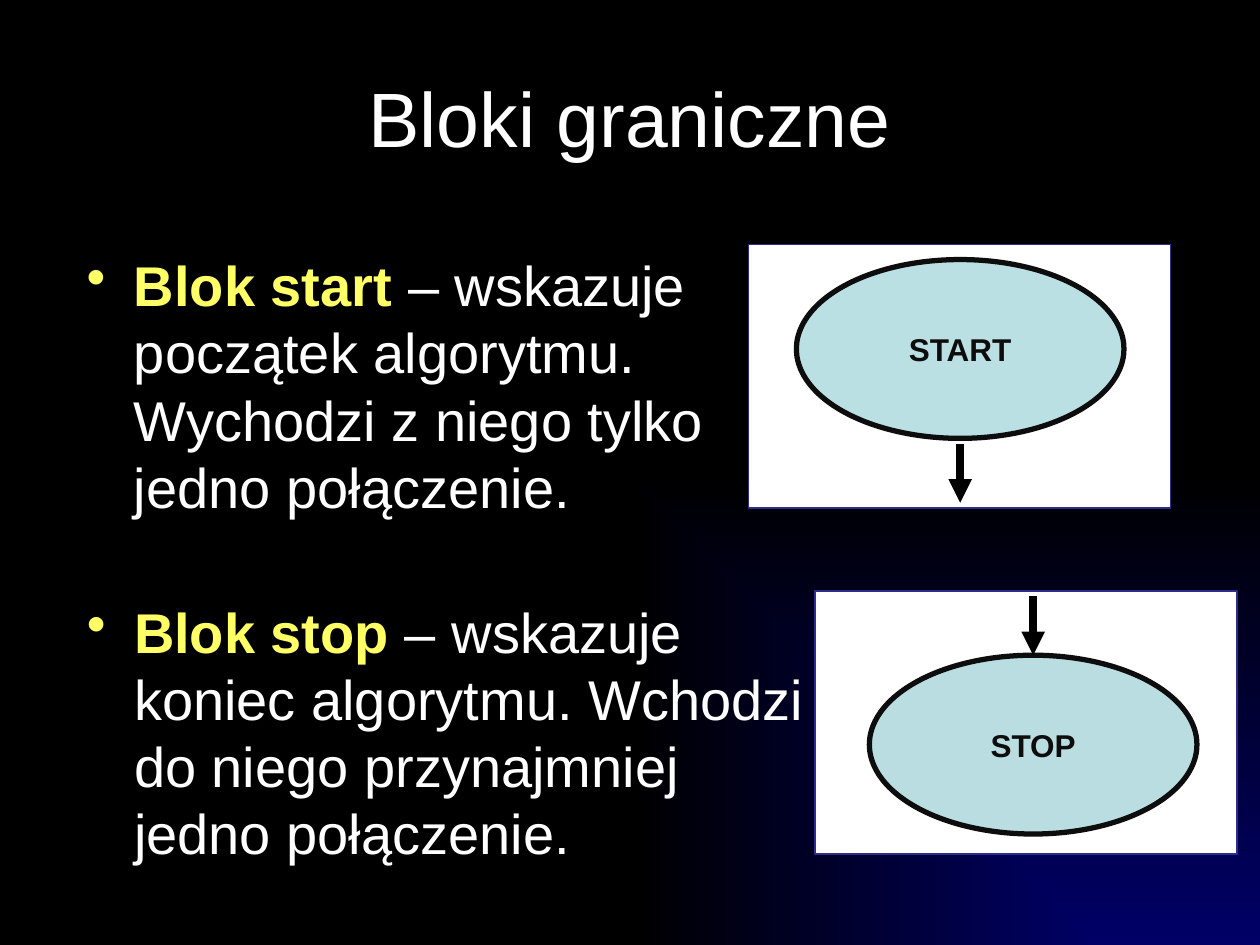
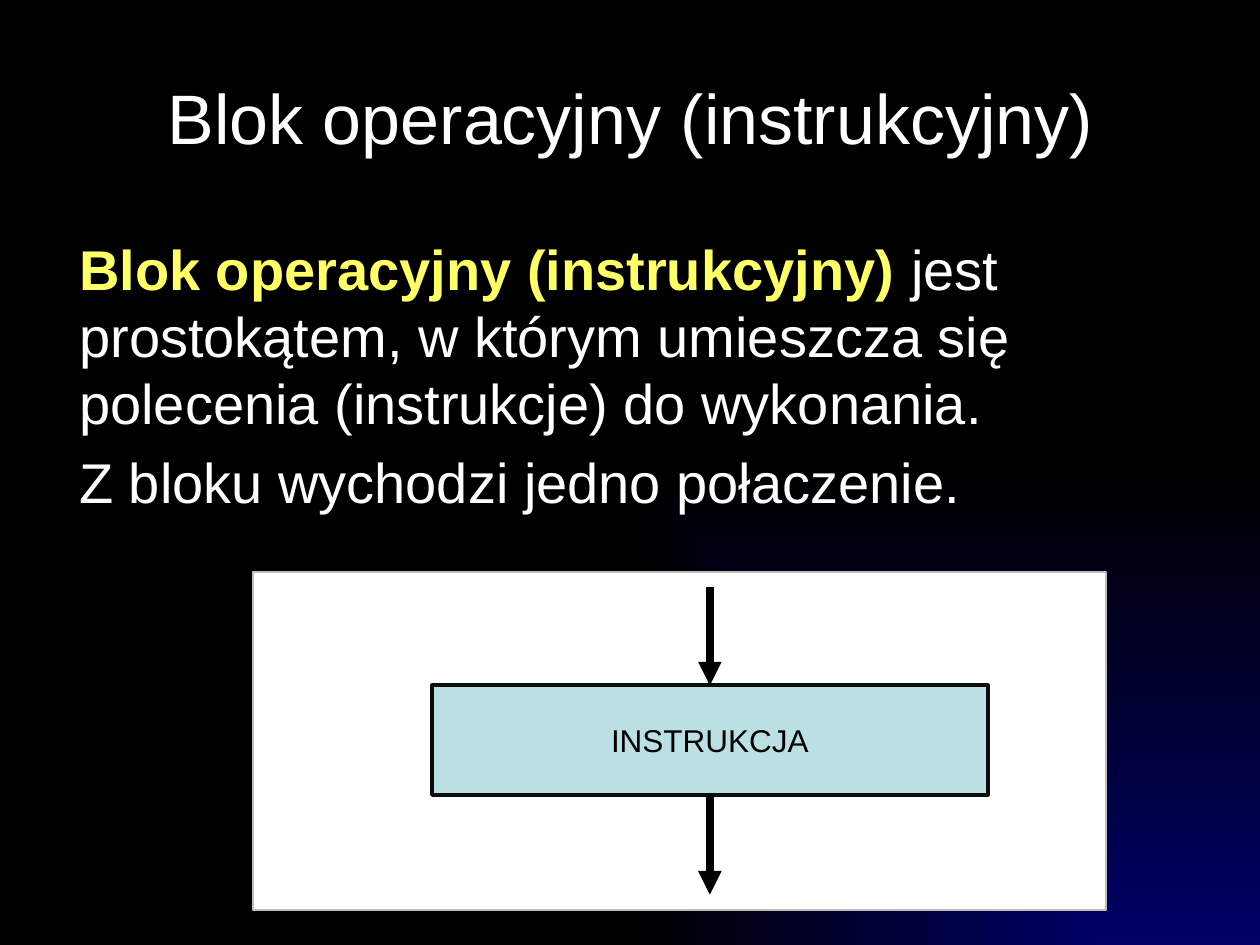
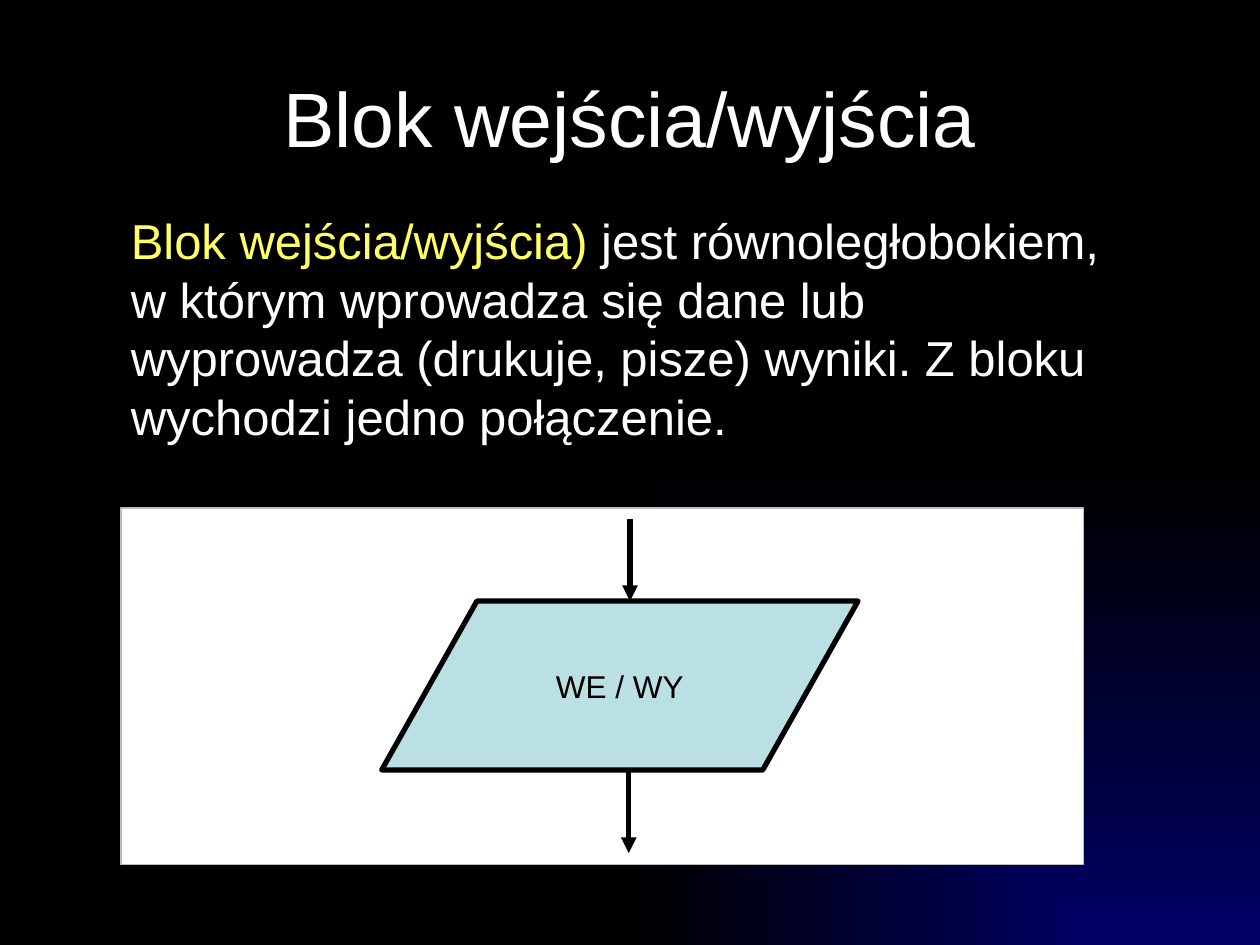
from dataclasses import dataclass

from lxml.etree import SubElement
from pptx import Presentation
from pptx.dml.color import RGBColor
from pptx.enum.shapes import MSO_CONNECTOR, MSO_SHAPE
from pptx.enum.text import MSO_ANCHOR, PP_ALIGN
from pptx.oxml import parse_xml
from pptx.oxml.ns import nsdecls, qn
from pptx.util import Pt


@dataclass(frozen=True)
class Theme:
    """Colours, font and type sizes of the deck."""
    font: str = "Arial"
    night: str = "000000"
    navy: str = "000066"
    white: str = "FFFFFF"
    yellow: str = "FFFF66"
    aqua: str = "BBE0E3"
    teal: str = "BADDE1"
    ink: str = "0D0D0D"
    indigo: str = "2D2D8A"
    silver: str = "BDBDBD"
    title: int = 44
    tight: int = 40
    body: int = 32
    small: int = 28
    label: int = 18


@dataclass(frozen=True)
class Node:
    """A flowchart block, placed relative to its panel."""
    kind: MSO_SHAPE
    box: tuple
    text: str
    fill: str
    line: str
    weight: float
    ink: str
    bold: bool = False


THEME = Theme()
WIDE, HIGH = 720, 540


def paint(run, size, color, bold=False):
    """Give a run its font, size, colour and weight."""
    font = run.font
    font.name, font.size, font.bold = THEME.font, Pt(size), bold
    font.color.rgb = RGBColor.from_string(color)


def shade(master):
    """Fill the master with a glow from the lower right corner."""
    master.background.fill.solid()
    plain = master.element.find(".//" + qn("a:solidFill"))
    glow = parse_xml(
        f'<a:gradFill {nsdecls("a")} rotWithShape="0"><a:gsLst>'
        f'<a:gs pos="0"><a:srgbClr val="{THEME.navy}"/></a:gs>'
        f'<a:gs pos="100000"><a:srgbClr val="{THEME.night}"/></a:gs></a:gsLst>'
        '<a:path path="rect"><a:fillToRect l="100000" t="100000"/></a:path>'
        '</a:gradFill>')
    plain.getparent().replace(plain, glow)


def frame(slide, box):
    """Add a wrapping text box and return its text frame."""
    area = slide.shapes.add_textbox(*map(Pt, box)).text_frame
    area.word_wrap = True
    return area


def head(slide, text, size=THEME.title):
    """Write the centred slide title."""
    area = frame(slide, (36, 21.6, 648, 90))
    area.vertical_anchor = MSO_ANCHOR.MIDDLE
    para = area.paragraphs[0]
    para.text, para.alignment = text, PP_ALIGN.CENTER
    paint(para.runs[0], size, THEME.white)


def prose(slide, box, paras, size=THEME.body, bold=True, bullet=False):
    """Write paragraphs, each a yellow term followed by white text."""
    area = frame(slide, box)
    for count, (term, rest) in enumerate(paras):
        para = area.add_paragraph() if count else area.paragraphs[0]
        for text, color, heavy in ((term, THEME.yellow, bold),
                                   (rest, THEME.white, False)):
            if text:
                run = para.add_run()
                run.text = text
                paint(run, size, color, heavy)
        props = para._p.get_or_add_pPr()
        space = SubElement(props, qn("a:spcBef"))
        SubElement(space, qn("a:spcPct")).set("val", "20000")
        if bullet:
            props.set("marL", str(Pt(27)))
            props.set("indent", str(Pt(-27)))
            SubElement(props, qn("a:buChar")).set("char", "•")


def block(slide, kind, box, fill, line, weight):
    """Draw a flat preset shape."""
    shape = slide.shapes.add_shape(kind, *map(Pt, box))
    shape.shadow.inherit = False
    shape.fill.solid()
    shape.fill.fore_color.rgb = RGBColor.from_string(fill)
    shape.line.color.rgb = RGBColor.from_string(line)
    shape.line.width = Pt(weight)
    return shape


def arrow(slide, across, start, end, weight):
    """Draw a downward arrow."""
    link = slide.shapes.add_connector(
        MSO_CONNECTOR.STRAIGHT, *map(Pt, (across, start, across, end)))
    link.line.color.rgb = RGBColor.from_string(THEME.night)
    link.line.width = Pt(weight)
    SubElement(link.line._get_or_add_ln(), qn("a:tailEnd")).set("type", "triangle")
    SubElement(link._element.spPr, qn("a:effectLst"))
    return link


def panel(slide, box, edge, node, arrows, weight=4.5):
    """Draw a white panel with one block and its arrows inside."""
    left, top = box[:2]
    block(slide, MSO_SHAPE.RECTANGLE, box, THEME.white, edge, 1)
    x, y, wide, high = node.box
    shape = block(slide, node.kind, (left + x, top + y, wide, high),
                  node.fill, node.line, node.weight)
    area = shape.text_frame
    area.text, area.vertical_anchor = node.text, MSO_ANCHOR.MIDDLE
    area.paragraphs[0].alignment = PP_ALIGN.CENTER
    paint(area.paragraphs[0].runs[0], THEME.label, node.ink, node.bold)
    for across, start, end in arrows:
        link = arrow(slide, left + across, top + start, top + end, weight)
        if node.kind == MSO_SHAPE.RECTANGLE:
            if start < y:
                link.end_connect(shape, 0)
            else:
                link.begin_connect(shape, 2)


def bounds(slide):
    """Build the slide on start and stop blocks."""
    head(slide, "Bloki graniczne")
    cases = (
        ("Blok start", " – wskazuje początek algorytmu. Wychodzi z niego tylko "
         "jedno połączenie.", (42.5, 139.7, 436.3, 170), (427.7, 139.7),
         "START", THEME.aqua, (27.4, 8.6), (121, 113.8, 147.6)),
        ("Blok stop", " – wskazuje koniec algorytmu. Wchodzi do niego "
         "przynajmniej jedno połączenie.", (42.5, 337.7, 425.5, 170), (465.8, 337.7),
         "STOP", THEME.teal, (31, 36.7), (124.6, 2.9, 36.7)))
    for term, rest, box, spot, label, fill, shift, line in cases:
        prose(slide, box, [(term, rest)], bullet=True)
        node = Node(MSO_SHAPE.OVAL, (*shift, 187.2, 102.2), label, fill,
                    THEME.ink, 3, THEME.ink, True)
        panel(slide, (*spot, 241.2, 150.5), THEME.indigo, node, [line])


def action(slide):
    """Build the slide on the instruction block."""
    head(slide, "Blok operacyjny (instrukcyjny)", THEME.tight)
    prose(slide, (38.2, 130.3, 652.3, 147.6), [
        ("Blok operacyjny (instrukcyjny)", " jest prostokątem, w którym umieszcza "
         "się polecenia (instrukcje) do wykonania."),
        ("", "Z bloku wychodzi jedno połaczenie.")])
    node = Node(MSO_SHAPE.RECTANGLE, (102.2, 64.8, 317.5, 62.6), "INSTRUKCJA",
                THEME.aqua, THEME.ink, 2.25, THEME.night)
    panel(slide, (144.7, 326.9, 487.4, 193), THEME.silver, node,
          [(260.95, 8.6, 64.8), (260.95, 127.4, 184.3)])


def traffic(slide):
    """Build the slide on the input and output block."""
    head(slide, "Blok wejścia/wyjścia")
    prose(slide, (67.7, 116.6, 581, 289.4), [
        ("Blok wejścia/wyjścia)", " jest równoległobokiem, w którym wprowadza się "
         "dane lub wyprowadza (drukuje, pisze) wyniki. Z bloku wychodzi jedno "
         "połączenie.")], THEME.small, False)
    node = Node(MSO_SHAPE.FLOWCHART_DATA, (149, 53.3, 272.2, 96.5), "WE / WY",
                THEME.aqua, THEME.night, 3, THEME.night)
    panel(slide, (69.1, 290.2, 550.1, 203.8), THEME.silver, node,
          [(290.9, 6.5, 53.3), (290.2, 149.8, 197.3)], 3)


def main():
    """Build and save the deck."""
    deck = Presentation()
    deck.slide_width, deck.slide_height = Pt(WIDE), Pt(HIGH)
    shade(deck.slide_master)
    for build in (bounds, action, traffic):
        build(deck.slides.add_slide(deck.slide_layouts[6]))
    deck.save("out.pptx")


if __name__ == "__main__":
    main()
